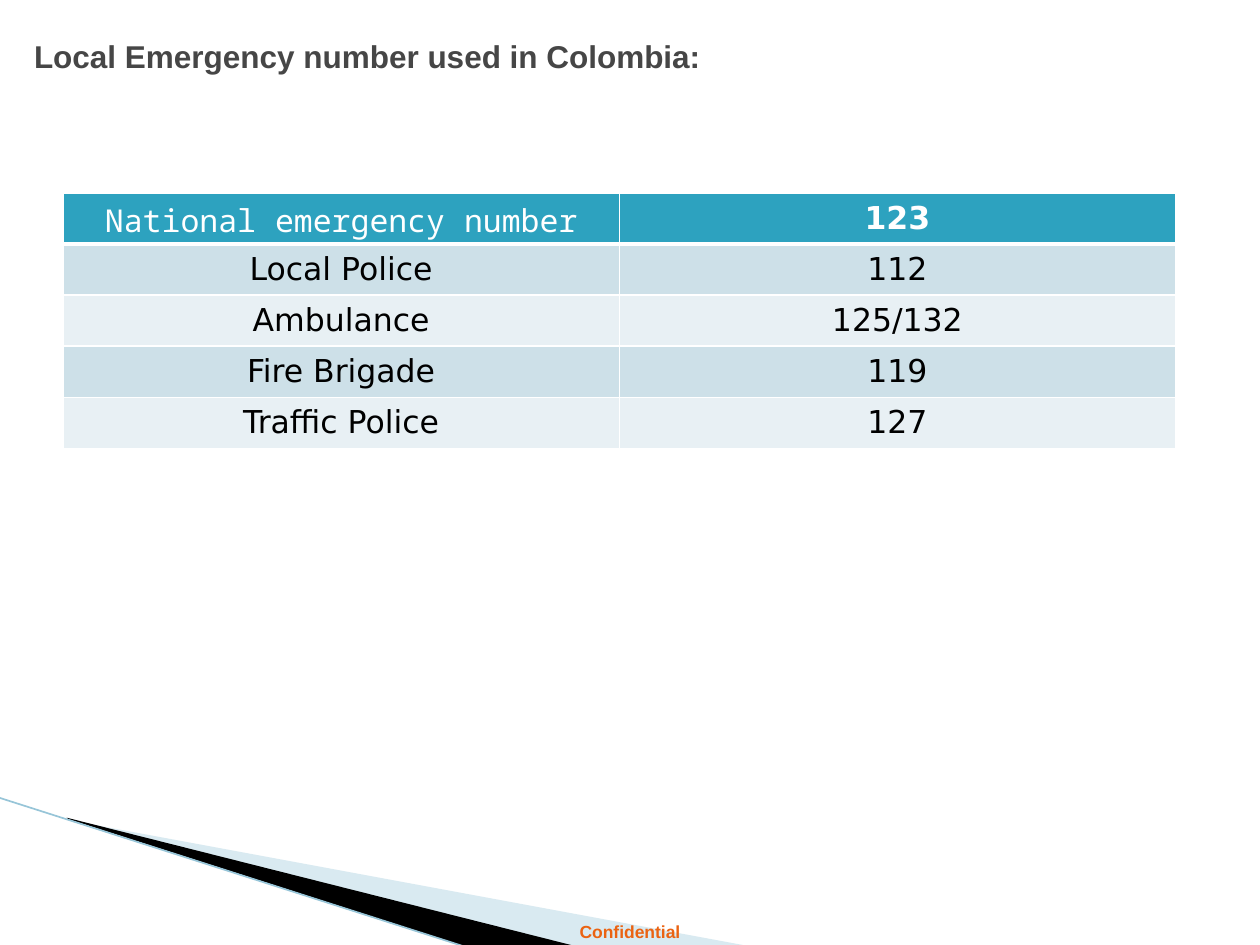
from pptx import Presentation
from pptx.dml.color import RGBColor
from pptx.enum.shapes import MSO_CONNECTOR
from pptx.enum.text import MSO_ANCHOR, MSO_AUTO_SIZE, PP_ALIGN
from pptx.oxml.ns import qn
from pptx.util import Inches, Pt
from lxml.etree import SubElement

ROWS = [
    ("National emergency number", "123"),
    ("Local Police", "112"),
    ("Ambulance", "125/132"),
    ("Fire Brigade", "119"),
    ("Traffic Police", "127"),
]


def rgb(value):
    return RGBColor.from_string(value)


class SlideBuilder:
    heading_font = "Arial"
    body_font = "DejaVu Sans"
    mono_font = "Noto Sans Mono"
    header_fill = "2DA2BF"
    band_fills = ("E8F0F4", "CDE0E8")

    def __init__(self, s):
        self.s = s

    def format_runs(self, p, font, size, color, bold=False):
        for r in p.runs:
            r.font.name = font
            r.font.size = Pt(size)
            r.font.bold = bold
            r.font.color.rgb = rgb(color)

    def place(self, sp, left, top, width, height):
        sp.left, sp.top = Inches(left), Inches(top)
        sp.width, sp.height = Inches(width), Inches(height)

    def wedge(self, points, color, opacity=100):
        start, *rest = [(Inches(x), Inches(y)) for x, y in points]
        builder = self.s.shapes.build_freeform(*start)
        builder.add_line_segments(rest, close=True)
        sp = builder.convert_to_shape()
        sp.shadow.inherit = False
        sp.line.fill.background()
        sp.fill.solid()
        sp.fill.fore_color.rgb = rgb(color)
        if opacity < 100:
            clr = sp.fill._xPr.find(".//" + qn("a:srgbClr"))
            SubElement(clr, qn("a:alpha"), val=str(opacity * 1000))

    def line(self, x1, y1, x2, y2, color, width):
        c = self.s.shapes.add_connector(
            MSO_CONNECTOR.STRAIGHT, Inches(x1), Inches(y1), Inches(x2), Inches(y2))
        c.line.color.rgb = rgb(color)
        c.line.width = Pt(width)
        SubElement(c._element.spPr, qn("a:effectLst"))

    def title(self, text, left, top, width, height):
        sp = self.s.shapes.title
        self.place(sp, left, top, width, height)
        tf = sp.text_frame
        tf.text = text
        tf.auto_size = MSO_AUTO_SIZE.NONE
        tf.vertical_anchor = MSO_ANCHOR.TOP
        tf.margin_top = Inches(0.12)
        p = tf.paragraphs[0]
        p.alignment = PP_ALIGN.LEFT
        self.format_runs(p, self.heading_font, 18, "464646", bold=True)

    def label(self, text, left, top, width, height):
        sp = self.s.shapes.add_textbox(0, 0, 0, 0)
        self.place(sp, left, top, width, height)
        tf = sp.text_frame
        tf.word_wrap = True
        tf.text = text
        p = tf.paragraphs[0]
        p.alignment = PP_ALIGN.CENTER
        self.format_runs(p, self.heading_font, 10, "EB6312", bold=True)

    def cell_borders(self, cell, **widths):
        """Draw white borders; widths in points by side: L, R, T, B."""
        tcPr = cell._tc.get_or_add_tcPr()
        for side, width in widths.items():
            ln = SubElement(tcPr, qn(f"a:ln{side}"), w=str(Pt(width)))
            fill = SubElement(ln, qn("a:solidFill"))
            SubElement(fill, qn("a:srgbClr"), val="FFFFFF")

    def table(self, rows, left, top, width, height):
        frame = self.s.shapes.add_table(
            len(rows), len(rows[0]), Inches(left), Inches(top),
            Inches(width), Inches(height))
        for i, row in enumerate(rows):
            header = i == 0
            for j, text in enumerate(row):
                cell = frame.table.cell(i, j)
                cell.text = text
                cell.vertical_anchor = MSO_ANCHOR.MIDDLE
                self.cell_borders(cell, L=1, R=1, T=3 if i == 1 else 1,
                                  B=3 if header else 1)
                cell.fill.solid()
                cell.fill.fore_color.rgb = rgb(
                    self.header_fill if header else self.band_fills[i % 2])
                p = cell.text_frame.paragraphs[0]
                p.alignment = PP_ALIGN.CENTER
                self.format_runs(
                    p, self.mono_font if header and j == 0 else self.body_font,
                    18, "FFFFFF" if header else "000000",
                    bold=header and j > 0)


def main():
    prs = Presentation()
    prs.slide_width, prs.slide_height = Inches(10), Inches(7.5)
    slide = SlideBuilder(prs.slides.add_slide(prs.slide_layouts[5]))

    slide.wedge([(0.55, 6.51), (5.95, 7.51), (4.56, 7.51), (0.55, 6.5)],
                "A0CBDC", opacity=40)
    slide.wedge([(0.53, 6.49), (4.57, 7.51), (3.72, 7.52), (0.54, 6.5)], "000000")
    slide.line(-0.01, 6.33, 3.71, 7.52, "97C5D8", 0.95)
    slide.label("Confidential", 0, 7.26, 10, 0.27)
    slide.title("Local Emergency number used in Colombia:", 0.17, 0.17, 9, 2)
    slide.table(ROWS, 0.5, 1.53, 8.83, 2.03)

    prs.save("out.pptx")


if __name__ == "__main__":
    main()
